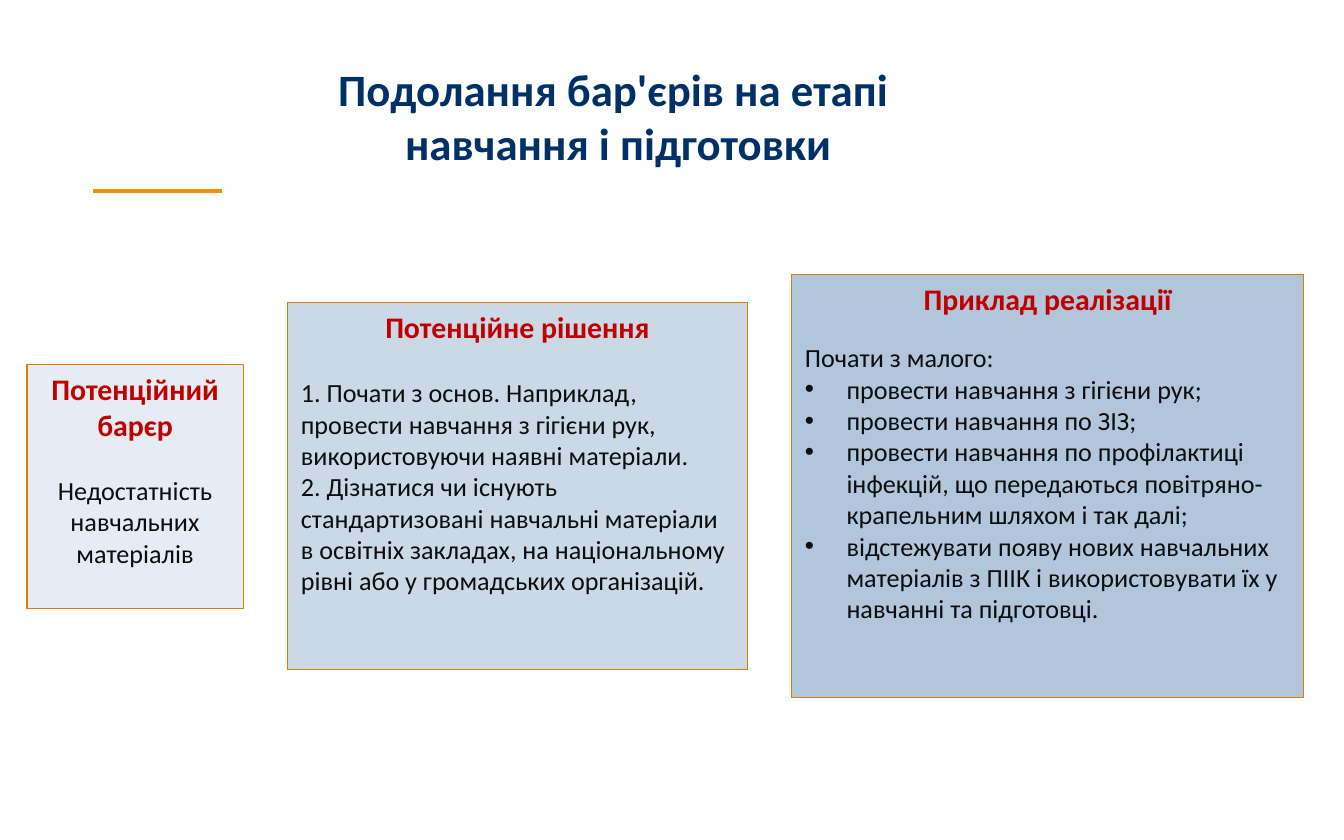
from lxml import etree
from pptx import Presentation
from pptx.dml.color import RGBColor
from pptx.enum import shapes, text
from pptx.oxml.ns import qn
from pptx.util import Inches, Pt

FONT = "Calibri"
NAVY, RED, INK = "003166", "C00000", "0D0D0D"
GOLD, EDGE = "F29100", "D48105"
LEFT, MID = text.PP_ALIGN.LEFT, text.PP_ALIGN.CENTER


def color(code):
    return RGBColor.from_string(code)


def bullet(para):
    props = para._p.get_or_add_pPr()
    props.set("marL", str(Inches(0.31)))
    props.set("indent", str(-Inches(0.31)))
    etree.SubElement(props, qn("a:buFont")).set("typeface", "Arial")
    etree.SubElement(props, qn("a:buChar")).set("char", "•")


def write(frame, words, size, tint, bold=False, align=LEFT, gap=0, dot=False):
    """Add one paragraph, using the empty first one if it is free."""
    para = frame.paragraphs[0]
    if para.runs:
        para = frame.add_paragraph()
    para.alignment = align
    if gap:
        para.space_before = Pt(gap)
    if dot:
        bullet(para)
    run = para.add_run()
    run.text = words
    font = run.font
    font.name, font.size, font.bold = FONT, Pt(size), bold
    font.color.rgb = color(tint)


def title(slide, box, lines):
    frame = slide.shapes.add_textbox(*map(Inches, box)).text_frame
    frame.word_wrap = True
    for line in lines:
        write(frame, line, 24, NAVY, True, MID)


def accent(slide, left, top, width):
    ends = map(Inches, (left, top, left + width, top))
    line = slide.shapes.add_connector(shapes.MSO_CONNECTOR.STRAIGHT, *ends)
    line.line.color.rgb = color(GOLD)
    line.line.width = Pt(2)
    etree.SubElement(line._element.spPr, qn("a:effectLst"))


def card(slide, box, fill, head, body, gap, align=LEFT, dots=()):
    """Filled box: red heading, body paragraphs, then bullets."""
    shape = slide.shapes.add_shape(shapes.MSO_SHAPE.RECTANGLE, *map(Inches, box))
    shape.shadow.inherit = False
    shape.fill.solid()
    shape.fill.fore_color.rgb = color(fill)
    shape.line.color.rgb = color(EDGE)
    shape.line.width = Pt(0.75)
    frame = shape.text_frame
    frame.word_wrap = True
    frame.vertical_anchor = text.MSO_ANCHOR.TOP
    write(frame, head, 16, RED, True, MID)
    for i, words in enumerate(body):
        write(frame, words, 14, INK, align=align, gap=0 if i else gap)
    for words in dots:
        write(frame, words, 14, INK, dot=True)


def main():
    deck = Presentation()
    deck.slide_width, deck.slide_height = Inches(10), Inches(6.25)
    slide = deck.slides.add_slide(deck.slide_layouts[6])

    # Heading
    accent(slide, 0.69, 1.42, 0.96)
    title(slide, (1, 0.41, 7.2, 0.91),
          ["Подолання бар'єрів на етапі ", "навчання і підготовки"])

    # Barrier, solution, example
    card(slide, (0.2, 2.71, 1.61, 1.82), "E5ECF3", "Потенційний барєр",
         ["Недостатність навчальних матеріалів"], 17, MID)
    card(slide, (2.14, 2.25, 3.42, 2.73), "CBD9E7", "Потенційне рішення",
         ["1. Почати з основ. Наприклад, провести навчання з гігієни рук, "
          "використовуючи наявні матеріали.",
          "2. Дізнатися чи існують стандартизовані навчальні матеріали в "
          "освітніх закладах, на національному рівні або у громадських "
          "організацій."], 17)
    card(slide, (5.89, 2.04, 3.81, 3.15), "B1C6DB", "Приклад реалізації",
         ["Почати з малого:"], 13.4,
         dots=["провести навчання з гігієни рук;",
               "провести навчання по ЗІЗ;",
               "провести навчання по профілактиці інфекцій, що передаються "
               "повітряно-крапельним шляхом і так далі;",
               "відстежувати появу нових навчальних матеріалів з ПІІК і "
               "використовувати їх у навчанні та підготовці."])
    deck.save("out.pptx")


if __name__ == "__main__":
    main()
